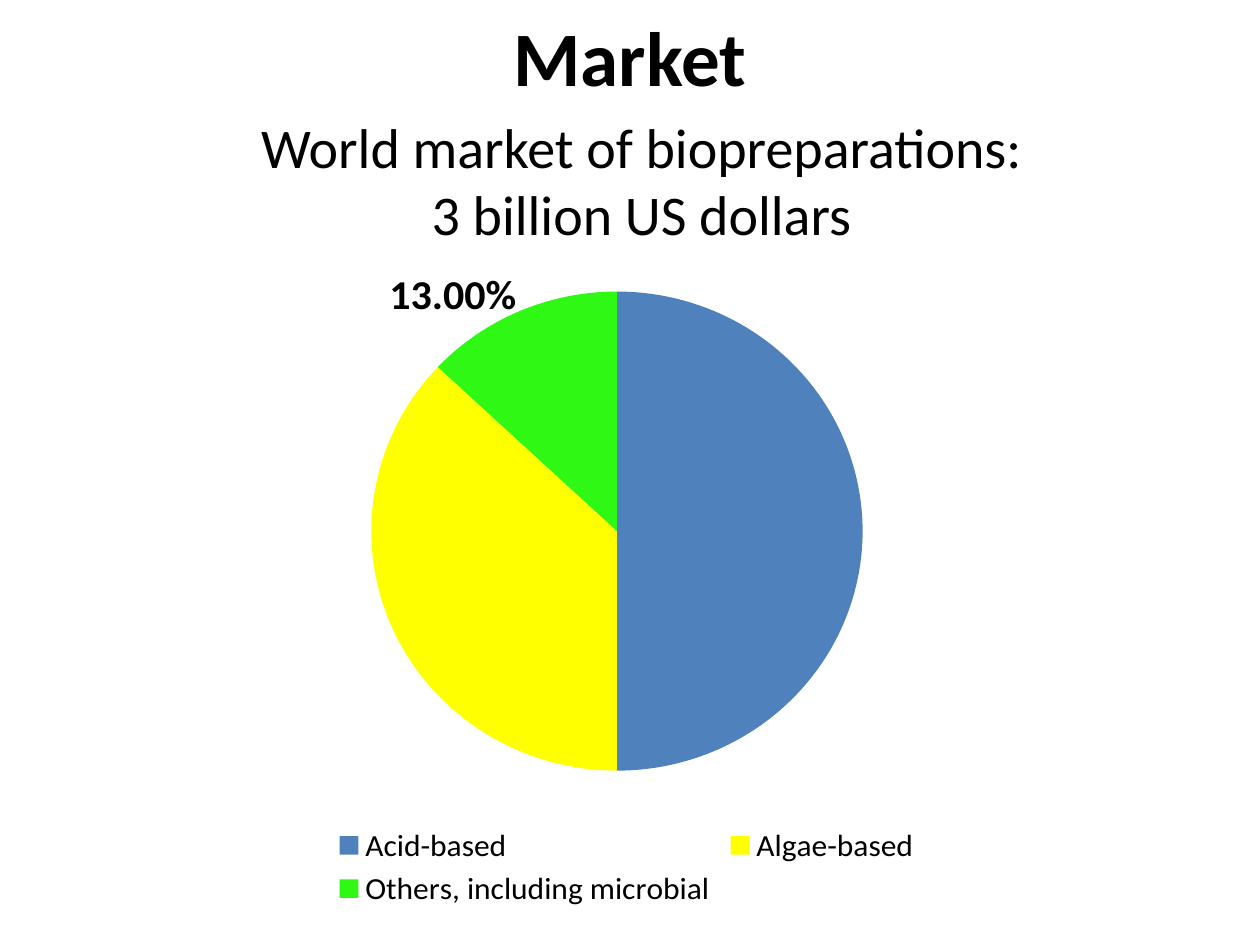
from lxml import etree
from pptx import Presentation
from pptx.chart.data import CategoryChartData
from pptx.dml.color import RGBColor
from pptx.enum.chart import XL_CHART_TYPE, XL_LABEL_POSITION, XL_LEGEND_POSITION
from pptx.enum.text import MSO_ANCHOR, MSO_AUTO_SIZE, PP_ALIGN
from pptx.oxml.ns import qn
from pptx.util import Pt

PIE = XL_CHART_TYPE.PIE
OUT = XL_LABEL_POSITION.OUTSIDE_END
BELOW = XL_LEGEND_POSITION.BOTTOM
MID = MSO_ANCHOR.MIDDLE
FIT = MSO_AUTO_SIZE.SHAPE_TO_FIT_TEXT
MIDDLE = PP_ALIGN.CENTER
BLACK = RGBColor(0x00, 0x00, 0x00)
BLUE = RGBColor(0x4F, 0x81, 0xBD)
YELLOW = RGBColor(0xFF, 0xFF, 0x00)
GREEN = RGBColor(0x2F, 0xF8, 0x14)

FACE = "Calibri"
TITLE = ["Market"]
LEAD = ["World market of biopreparations:", "3 billion US dollars"]
SHARES = [
    ("Acid-based", 0.5, BLUE, False),
    ("Algae-based", 0.37, YELLOW, False),
    ("Others, including microbial", 0.13, GREEN, True),
]
TITLE_BOX = (36, -13, 648, 90)
LEAD_BOX = (139.5, 60.5, 454.5, 85)
CHART_BOX = (88, 145.5, 540, 376.5)
PLOT = {"x": 0.23, "y": 0.03, "w": 0.52, "h": 0.75}


def style(font, size, bold=False):
    look = {"name": FACE, "size": Pt(size), "bold": bold}
    for key, value in look.items():
        setattr(font, key, value)
    font.color.rgb = BLACK


def write(frame, lines, size, bold=False):
    frame.text = "\n".join(lines)
    for para in frame.paragraphs:
        para.alignment = MIDDLE
        style(para.runs[0].font, size, bold)


def node(host, tag, value=None):
    part = etree.SubElement(host, qn("c:" + tag))
    if value is not None:
        part.set("val", str(value))
    return part


def place(chart):
    area = chart._chartSpace.find(".//" + qn("c:plotArea"))
    for old in area.findall(qn("c:layout")):
        area.remove(old)
    outer = etree.Element(qn("c:layout"))
    inner = node(outer, "manualLayout")
    node(inner, "layoutTarget", "inner")
    for key in "xy":
        node(inner, key + "Mode", "edge")
    for key, value in PLOT.items():
        node(inner, key, value)
    area.insert(0, outer)


def mute(labels, spot, order):
    label = etree.Element(qn("c:dLbl"))
    node(label, "idx", spot)
    node(label, "delete", 1)
    labels._element.insert(order, label)


def add_pie(slide):
    data = CategoryChartData(number_format="0.00%")
    data.categories = [share[0] for share in SHARES]
    data.add_series("Series 1", [share[1] for share in SHARES])
    chart = slide.shapes.add_chart(PIE, *map(Pt, CHART_BOX), data).chart
    chart.has_title = False
    style(chart.font, 18)
    chart.has_legend = True
    chart.legend.position = BELOW
    chart.legend.include_in_layout = False
    place(chart)
    chart.plots[0].vary_by_categories = True
    series = chart.plots[0].series[0]
    labels = series.data_labels
    look = {
        "show_value": True,
        "number_format": "0.00%",
        "number_format_is_linked": False,
        "position": OUT,
    }
    for key, value in look.items():
        setattr(labels, key, value)
    style(labels.font, 24, True)
    muted = 0
    for spot, (_, _, color, shown) in enumerate(SHARES):
        fill = series.points[spot].format.fill
        fill.solid()
        fill.fore_color.rgb = color
        if not shown:
            mute(labels, spot, muted)
            muted += 1


def main():
    deck = Presentation()
    deck.slide_width, deck.slide_height = Pt(720), Pt(540)
    slide = deck.slides.add_slide(deck.slide_layouts[5])
    title = slide.shapes.title
    for key, value in zip(("left", "top", "width", "height"), TITLE_BOX):
        setattr(title, key, Pt(value))
    title.text_frame.vertical_anchor = MID
    write(title.text_frame, TITLE, 44, True)
    lead = slide.shapes.add_textbox(*map(Pt, LEAD_BOX)).text_frame
    lead.word_wrap = False
    lead.auto_size = FIT
    write(lead, LEAD, 32)
    add_pie(slide)
    deck.save("out.pptx")


if __name__ == "__main__":
    main()
